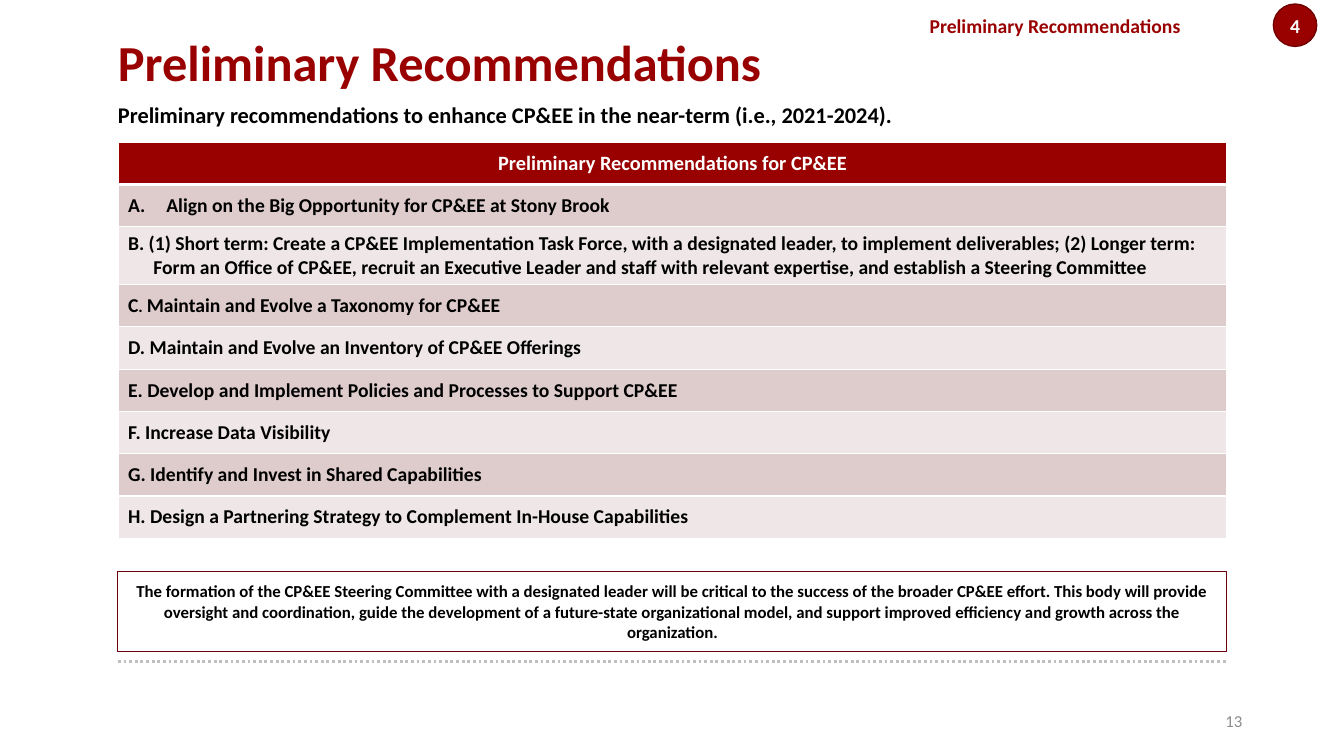
from lxml import etree
from pptx import Presentation
from pptx.dml.color import RGBColor
from pptx.enum.dml import MSO_LINE
from pptx.enum.shapes import MSO_CONNECTOR, MSO_SHAPE
from pptx.enum.text import MSO_ANCHOR, MSO_AUTO_SIZE, PP_ALIGN
from pptx.oxml.ns import qn
from pptx.util import Pt

LEFT, CENTER, RIGHT = PP_ALIGN.LEFT, PP_ALIGN.CENTER, PP_ALIGN.RIGHT
TOP, MIDDLE = MSO_ANCHOR.TOP, MSO_ANCHOR.MIDDLE
NO_AUTOFIT = MSO_AUTO_SIZE.NONE
STRAIGHT = MSO_CONNECTOR.STRAIGHT
OVAL, RECTANGLE = MSO_SHAPE.OVAL, MSO_SHAPE.RECTANGLE
DOTTED = MSO_LINE.ROUND_DOT
PX = 9144
MARGIN, WIDTH = 117, 1100
RED, BLACK, WHITE = "990000", "000000", "FFFFFF"


def paint(fill, color):
    fill.solid()
    fill.fore_color.rgb = RGBColor.from_string(color)


def write(frame, text, size=14, color=BLACK, bold=True, align=LEFT,
          anchor=TOP, inset=0, indent=0, numbered=False):
    frame.word_wrap = True
    frame.auto_size = NO_AUTOFIT
    frame.vertical_anchor = anchor
    frame.margin_left = frame.margin_right = inset * PX
    frame.margin_top = frame.margin_bottom = inset * PX
    para = frame.paragraphs[0]
    para.alignment = align
    properties = para._p.get_or_add_pPr()
    properties.set("marL", str(indent * PX))
    properties.set("indent", str(-indent * PX))
    if numbered:
        etree.SubElement(properties, qn("a:buAutoNum"), type="alphaUcPeriod")
    para.font.size = Pt(size)
    para.font.bold = bold
    parts = [(text, size)] if isinstance(text, str) else text
    for words, points in parts:
        span = para.add_run()
        span.text = words
        span.font.name = "Calibri"
        span.font.size = Pt(points)
        span.font.bold = bold
        paint(span.font.fill, color)


deck = Presentation()
deck.slide_width, deck.slide_height = 1333 * PX, 750 * PX
page = deck.slides.add_slide(deck.slide_layouts[5])
shapes = page.shapes

rule = shapes.add_connector(STRAIGHT, MARGIN * PX, 656 * PX, (MARGIN + WIDTH) * PX, 656 * PX)
paint(rule.line.fill, "BFBFBF")
rule.line.width = Pt(2)
rule.line.dash_style = DOTTED
etree.SubElement(rule._element.spPr, qn("a:effectLst"))

title = shapes.title
title.left, title.top = MARGIN * PX, 30 * PX
title.width, title.height = WIDTH * PX, 61 * PX
write(title.text_frame, "Preliminary Recommendations", size=36, color=RED, anchor=MIDDLE)

labels = [
    (922, 14, 344, 24, "Preliminary Recommendations", dict(color=RED)),
    (MARGIN, 100, 1125, 30,
     "Preliminary recommendations to enhance CP&EE in the near-term (i.e., 2021-2024).",
     dict(size=16)),
    (942, 695, 300, 40, "13",
     dict(size=12, color="8C8C8C", bold=False, align=RIGHT, anchor=MIDDLE, inset=10)),
]
for left, top, width, height, text, style in labels:
    box = shapes.add_textbox(left * PX, top * PX, width * PX, height * PX)
    write(box.text_frame, text, **style)

panels = [
    (OVAL, 1263, 4, 43, 42, RED, "710000", 1, "4", dict(color=WHITE)),
    (RECTANGLE, MARGIN, 567, WIDTH, 79, None, "6B000D", 0.75,
     "The formation of the CP&EE Steering Committee with a designated leader will be critical "
     "to the success of the broader CP&EE effort. This body will provide oversight and "
     "coordination, guide the development of a future-state organizational model, and support "
     "improved efficiency and growth across the organization.", dict(size=12, inset=10)),
]
for kind, left, top, width, height, fill, outline, weight, text, style in panels:
    panel = shapes.add_shape(kind, left * PX, top * PX, width * PX, height * PX)
    panel.shadow.inherit = False
    if fill:
        paint(panel.fill, fill)
    else:
        panel.fill.background()
    paint(panel.line.fill, outline)
    panel.line.width = Pt(weight)
    write(panel.text_frame, text, align=CENTER, anchor=MIDDLE, **style)

recommendations = [
    ("Preliminary Recommendations for CP&EE", dict(size=14.5, color=WHITE, align=CENTER)),
    ("Align on the Big Opportunity for CP&EE at Stony Brook", dict(indent=38, numbered=True)),
    ("B. (1) Short term: Create a CP&EE Implementation Task Force, with a designated leader, "
     "to implement deliverables; (2) Longer term: Form an Office of CP&EE, recruit an Executive "
     "Leader and staff with relevant expertise, and establish a Steering Committee",
     dict(indent=25)),
    ([("C", 14), (". ", 12), ("Maintain and Evolve a Taxonomy for CP&EE", 14)], {}),
    ("D. Maintain and Evolve an Inventory of CP&EE Offerings", {}),
    ("E. Develop and Implement Policies and Processes to Support CP&EE", {}),
    ("F. Increase Data Visibility", {}),
    ("G. Identify and Invest in Shared Capabilities", {}),
    ("H. Design a Partnering Strategy to Complement In-House Capabilities", {}),
]
count = len(recommendations)
table = shapes.add_table(count, 1, MARGIN * PX, 141 * PX, WIDTH * PX, 42 * count * PX).table
table.horz_banding = False
for index, (text, style) in enumerate(recommendations):
    table.rows[index].height = 42 * PX
    cell = table.cell(index, 0)
    cell.vertical_anchor = MIDDLE
    cell.margin_left = cell.margin_right = 10 * PX
    cell.margin_top = cell.margin_bottom = 5 * PX
    write(cell.text_frame, text, inset=0, **style)
    weights = dict(lnL=1, lnR=1, lnT=3 if index == 1 else 1, lnB=3 if index == 0 else 1)
    for side, weight in weights.items():
        border = etree.SubElement(cell._tc.get_or_add_tcPr(), qn("a:" + side), w=str(Pt(weight)))
        border_fill = etree.SubElement(border, qn("a:solidFill"))
        etree.SubElement(border_fill, qn("a:srgbClr"), val=WHITE)
    paint(cell.fill, RED if index == 0 else ("EFE7E7", "DECCCC")[index % 2])

deck.save("out.pptx")
